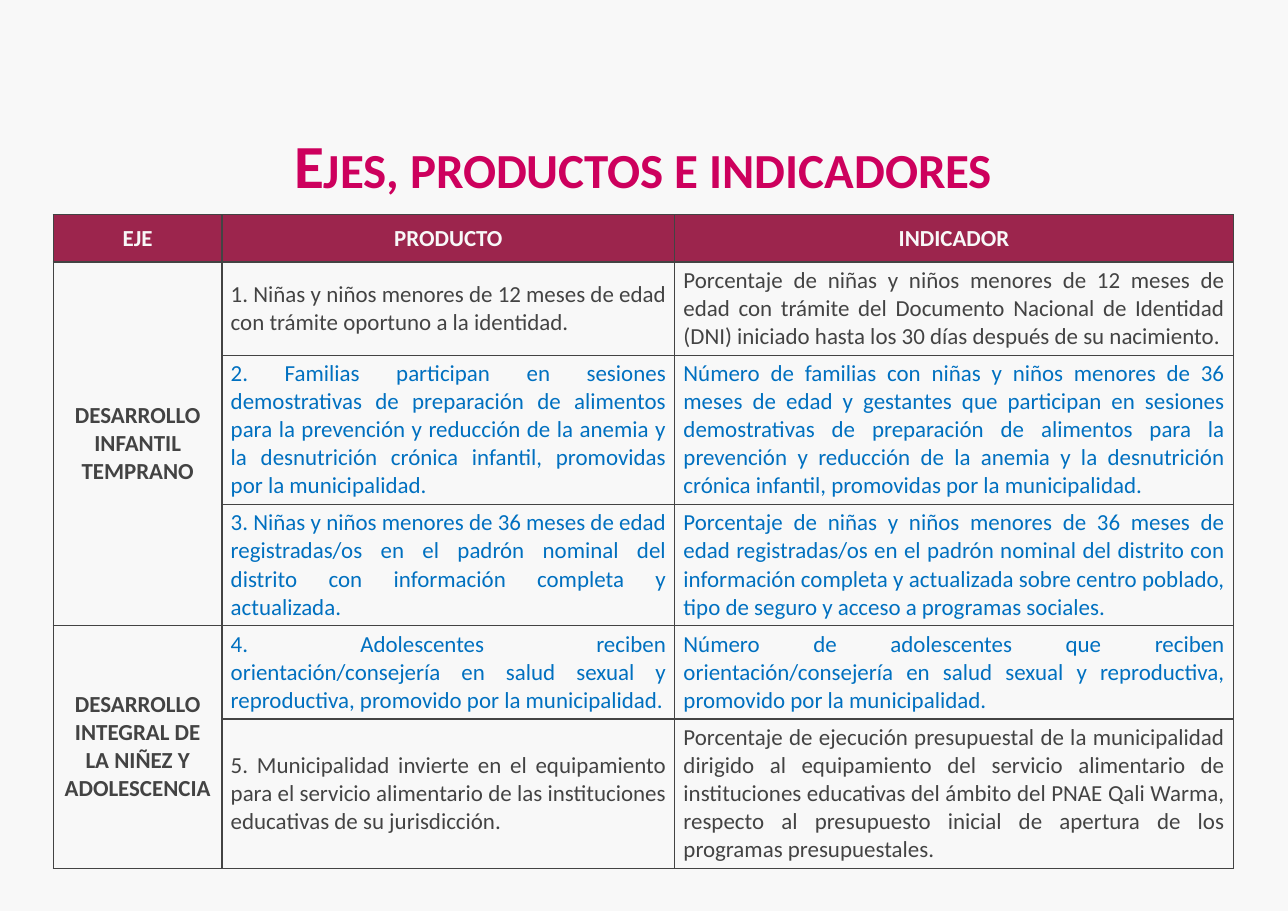
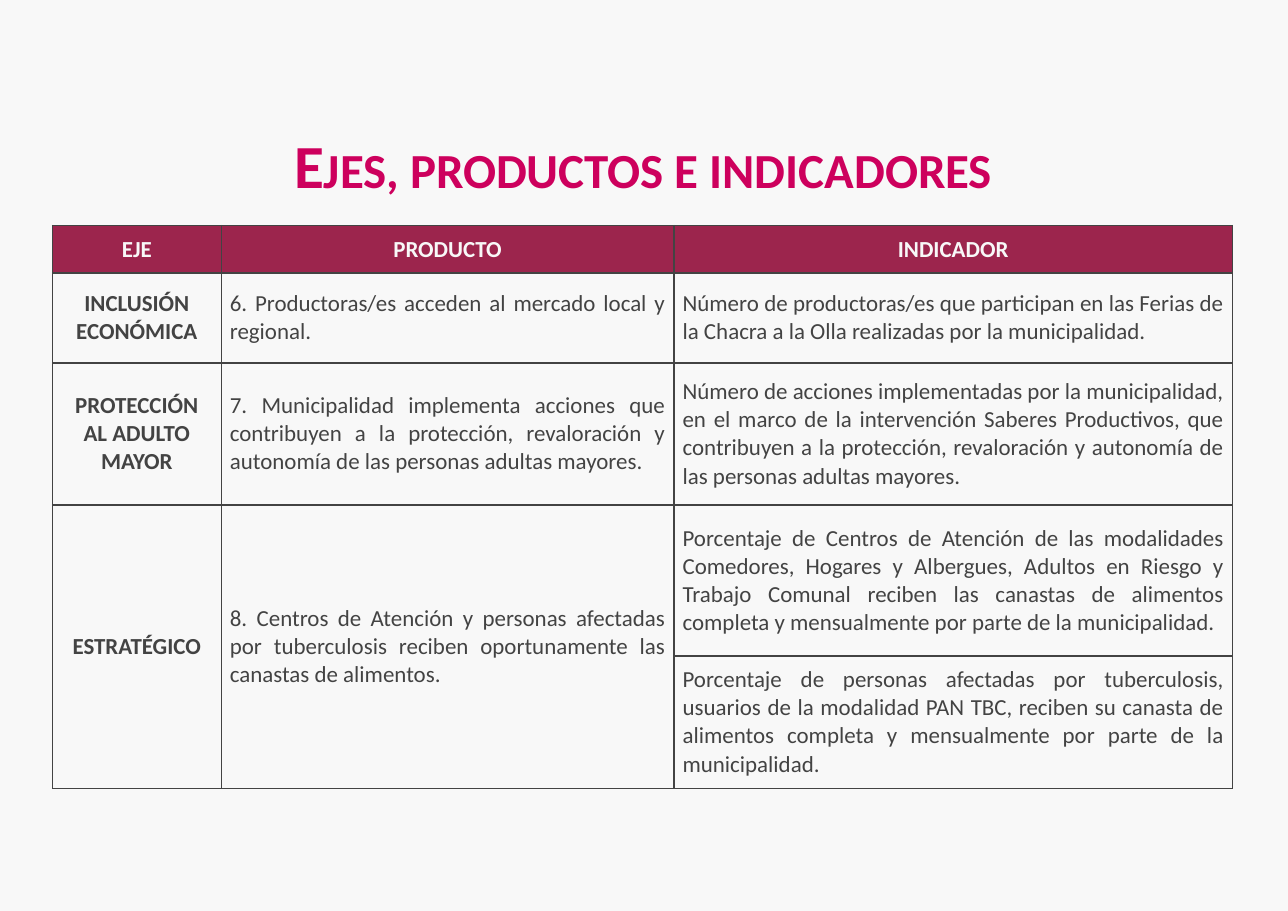
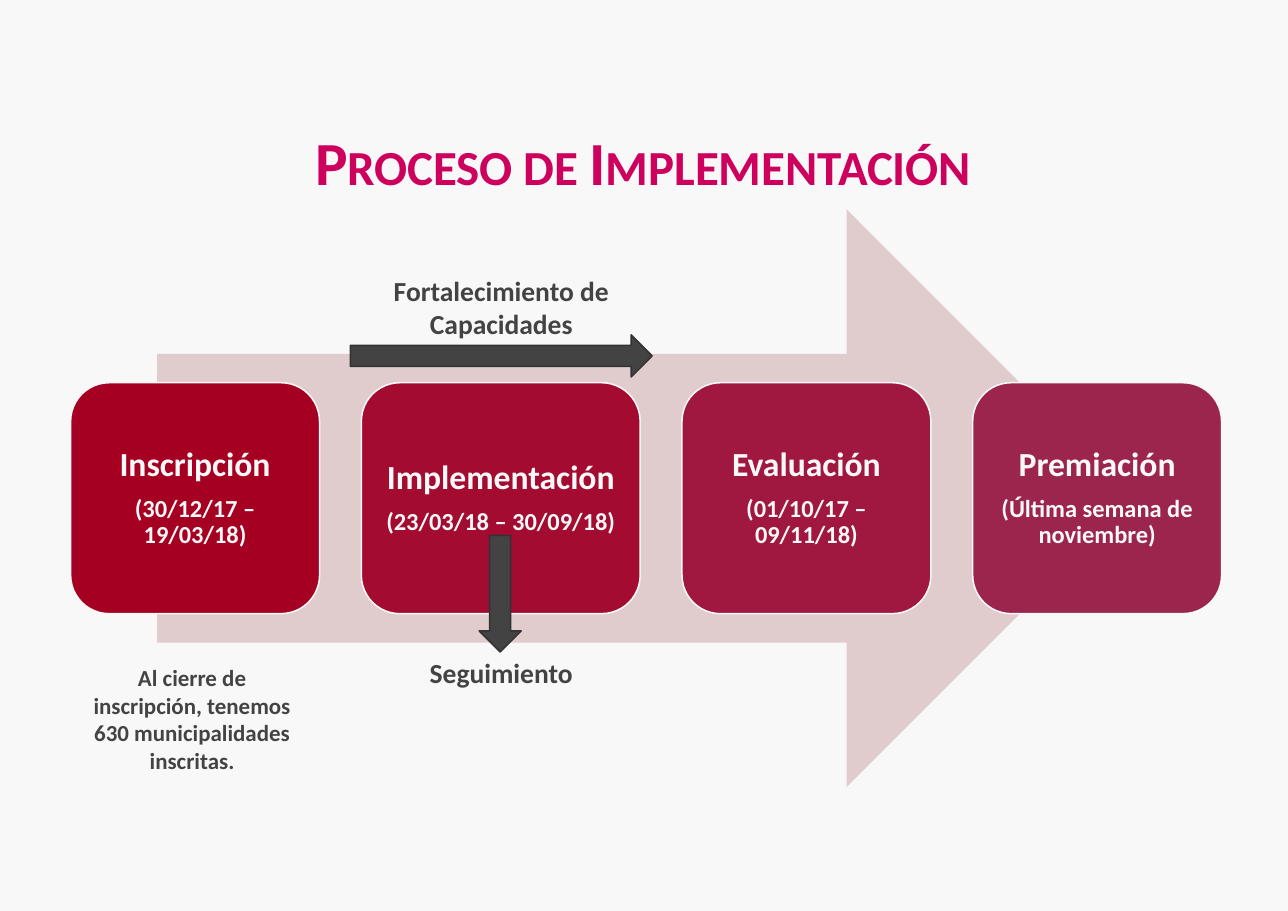
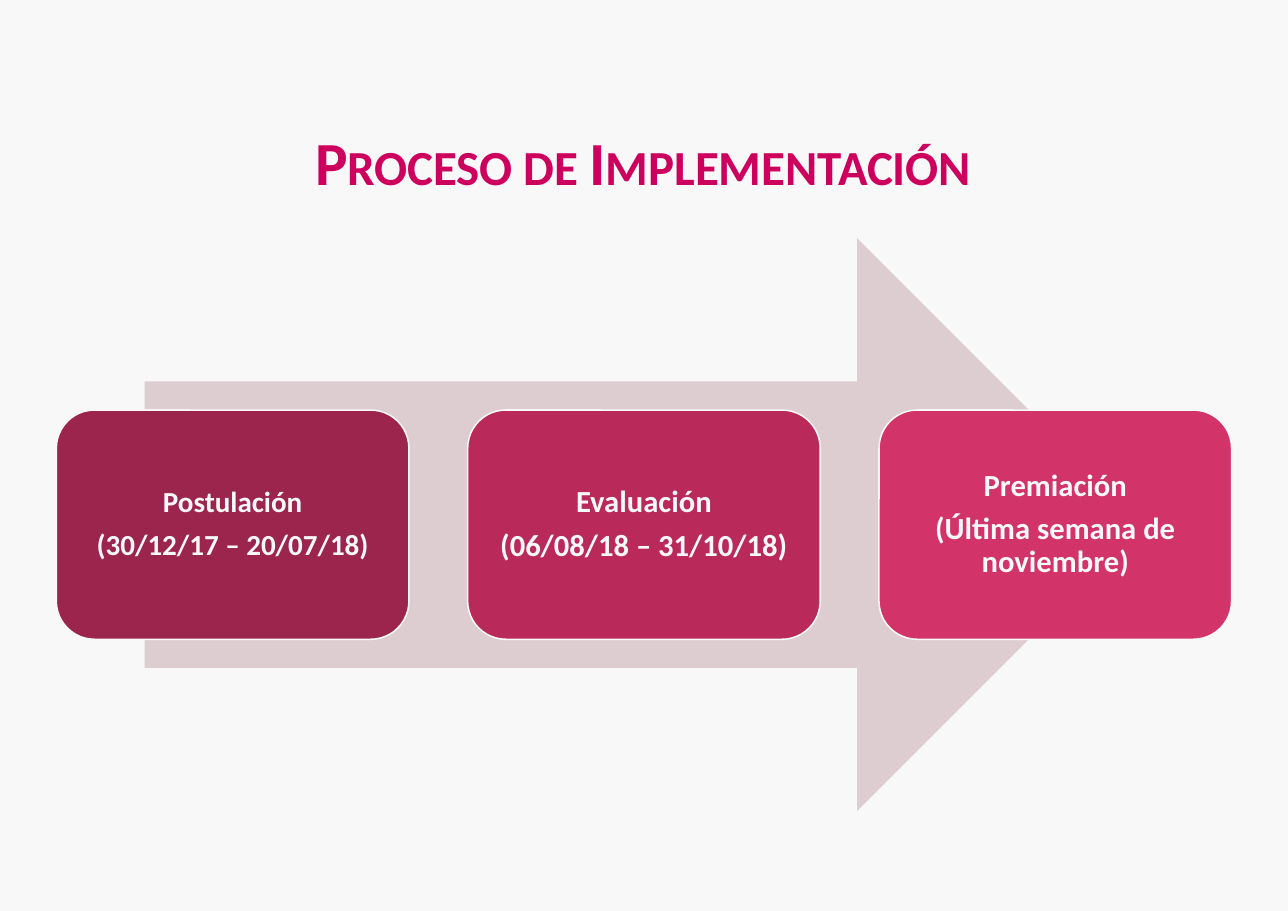
import dataclasses

import lxml.etree
import pptx
import pptx.dml.color
import pptx.enum.shapes
import pptx.enum.text
import pptx.oxml.ns
import pptx.util

Cm = pptx.util.Cm
Pt = pptx.util.Pt
Align = pptx.enum.text.PP_ALIGN
Anchor = pptx.enum.text.MSO_ANCHOR
Shape = pptx.enum.shapes.MSO_SHAPE
qn = pptx.oxml.ns.qn


@dataclasses.dataclass(frozen=True)
class Theme:
    font: str = "Calibri"
    paper: str = "F8F8F8"
    ink: str = "434343"
    edge: str = "323232"
    wine: str = "9C254D"
    pink: str = "CD005D"
    blue: str = "0070C0"
    title: int = 40
    card: int = 22
    label: int = 18
    date: int = 16
    body: int = 15


@dataclasses.dataclass(frozen=True)
class Box:
    """Left, top, width and height in centimetres."""
    x: float
    y: float
    w: float
    h: float

    def place(self):
        return Cm(self.x), Cm(self.y), Cm(self.w), Cm(self.h)


@dataclasses.dataclass(frozen=True)
class Card:
    name: str
    date: str
    fill: str
    width: float
    size: int
    small: int


T = Theme()
PAGE = Box(0, 0, 29.7, 21)
HEAD = ("EJE", "PRODUCTO", "INDICADOR")
COLS = (3.89, 10.44, 12.88)

# Row height, colour of the texts, then the three cells; None joins the cell above.
CHILD = (
    (2.15, T.ink, "DESARROLLO INFANTIL TEMPRANO",
     "1. Niñas y niños menores de 12 meses de edad con trámite oportuno a la identidad.",
     "Porcentaje de niñas y niños menores de 12 meses de edad con trámite del Documento "
     "Nacional de Identidad (DNI) iniciado hasta los 30 días después de su nacimiento."),
    (3.43, T.blue, None,
     "2. Familias participan en sesiones demostrativas de preparación de alimentos para la "
     "prevención y reducción de la anemia y la desnutrición crónica infantil, promovidas "
     "por la municipalidad.",
     "Número de familias con niñas y niños menores de 36 meses de edad y gestantes que "
     "participan en sesiones demostrativas de preparación de alimentos para la prevención "
     "y reducción de la anemia y la desnutrición crónica infantil, promovidas por la "
     "municipalidad."),
    (2.79, T.blue, None,
     "3. Niñas y niños menores de 36 meses de edad registradas/os en el padrón nominal del "
     "distrito con información completa y actualizada.",
     "Porcentaje de niñas y niños menores de 36 meses de edad registradas/os en el padrón "
     "nominal del distrito con información completa y actualizada sobre centro poblado, "
     "tipo de seguro y acceso a programas sociales."),
    (2.15, T.blue, "DESARROLLO INTEGRAL DE LA NIÑEZ Y ADOLESCENCIA",
     "4. Adolescentes reciben orientación/consejería en salud sexual y reproductiva, "
     "promovido por la municipalidad.",
     "Número de adolescentes que reciben orientación/consejería en salud sexual y "
     "reproductiva, promovido por la municipalidad."),
    (3.43, T.ink, None,
     "5. Municipalidad invierte en el equipamiento para el servicio alimentario de las "
     "instituciones educativas de su jurisdicción.",
     "Porcentaje de ejecución presupuestal de la municipalidad dirigido al equipamiento del "
     "servicio alimentario de instituciones educativas del ámbito del PNAE Qali Warma, "
     "respecto al presupuesto inicial de apertura de los programas presupuestales."),
)
ADULT = (
    (2.08, T.ink, "INCLUSIÓN ECONÓMICA",
     "6. Productoras/es acceden al mercado local y regional.",
     "Número de productoras/es que participan en las Ferias de la Chacra a la Olla "
     "realizadas por la municipalidad."),
    (3.27, T.ink, "PROTECCIÓN AL ADULTO MAYOR",
     "7. Municipalidad implementa acciones que contribuyen a la protección, revaloración y "
     "autonomía de las personas adultas mayores.",
     "Número de acciones implementadas por la municipalidad, en el marco de la intervención "
     "Saberes Productivos, que contribuyen a la protección, revaloración y autonomía de las "
     "personas adultas mayores."),
    (3.48, T.ink, "ESTRATÉGICO",
     "8. Centros de Atención y personas afectadas por tuberculosis reciben oportunamente "
     "las canastas de alimentos.",
     "Porcentaje de Centros de Atención de las modalidades Comedores, Hogares y Albergues, "
     "Adultos en Riesgo y Trabajo Comunal reciben las canastas de alimentos completa y "
     "mensualmente por parte de la municipalidad."),
    (3.05, T.ink, None, None,
     "Porcentaje de personas afectadas por tuberculosis, usuarios de la modalidad PAN TBC, "
     "reciben su canasta de alimentos completa y mensualmente por parte de la municipalidad."),
)
AWARD = "(Última semana de noviembre)"
STEPS = (
    Card("Inscripción", "(30/12/17 – 19/03/18)", "A50021", 5.74, T.card, T.date),
    Card("Implementación", "(23/03/18 – 30/09/18)", "A30B30", 6.43, T.card, T.date),
    Card("Evaluación", "(01/10/17 – 09/11/18)", "A0173F", 5.74, T.card, T.date),
    Card("Premiación", AWARD, T.wine, 5.74, T.card, T.date),
)
STAGES = (
    Card("Postulación", "(30/12/17 – 20/07/18)", T.wine, 8.13, 19, 19),
    Card("Evaluación", "(06/08/18 – 31/10/18)", "B92A5A", 8.13, 20, 20),
    Card("Premiación", AWARD, "D23369", 8.13, 20, 20),
)


def rgb(code):
    return pptx.dml.color.RGBColor.from_string(code)


def paint(item, code):
    item.fill.solid()
    item.fill.fore_color.rgb = rgb(code)


def write(para, text, size, color, bold=True, align=Align.CENTER):
    para.alignment = align
    run = para.add_run()
    run.text = text
    font = run.font
    font.name, font.size, font.bold = T.font, Pt(size), bold
    font.color.rgb = rgb(color)
    return run


def new_slide(deck):
    slide = deck.slides.add_slide(deck.slide_layouts[6])
    paint(slide.background, T.paper)
    return slide


def add_text(slide, box, text, size, color, anchor=Anchor.TOP):
    frame = slide.shapes.add_textbox(*box.place()).text_frame
    frame.word_wrap = True
    frame.vertical_anchor = anchor
    para = frame.paragraphs[0]
    return para, write(para, text, size, color)


def add_title(slide, box, text):
    para, run = add_text(slide, box, text, T.title, T.pink, Anchor.MIDDLE)
    para.line_spacing = 0.9
    run.font._element.set("cap", "small")


def add_form(slide, kind, box, fill, line=None):
    form = slide.shapes.add_shape(kind, *box.place())
    form.shadow.inherit = False
    paint(form, fill)
    if line:
        form.line.color.rgb = rgb(line)
        form.line.width = Pt(1)
    else:
        form.line.fill.background()
    return form


def add_edges(cell):
    props = cell._tc.get_or_add_tcPr()
    for side in ("a:lnL", "a:lnR", "a:lnT", "a:lnB"):
        line = lxml.etree.SubElement(props, qn(side), w=str(Pt(1)))
        fill = lxml.etree.SubElement(line, qn("a:solidFill"))
        lxml.etree.SubElement(fill, qn("a:srgbClr"), val=T.ink)


def fill_cell(cell, text, color, bold, align, fill):
    cell.margin_left = cell.margin_right = Cm(0.2)
    cell.margin_top = cell.margin_bottom = Cm(0.1)
    cell.vertical_anchor = Anchor.MIDDLE
    add_edges(cell)
    paint(cell, fill)
    if text:
        write(cell.text_frame.paragraphs[0], text, T.body, color, bold, align)


def join_cells(grid, rows):
    """Merge each None with the nearest text above it."""
    for col in range(len(COLS)):
        starts = [i for i, row in enumerate(rows, 1) if row[2 + col]]
        for start, end in zip(starts, starts[1:] + [len(rows) + 1]):
            if end - start > 1:
                grid.cell(start, col).merge(grid.cell(end - 1, col))


def add_grid(slide, left, top, rows):
    tall = [1.09] + [row[0] for row in rows]
    box = Box(left, top, sum(COLS), sum(tall))
    grid = slide.shapes.add_table(len(tall), len(COLS), *box.place()).table
    grid.horz_banding = False
    for col, wide in zip(grid.columns, COLS):
        col.width = Cm(wide)
    for row, high in zip(grid.rows, tall):
        row.height = Cm(high)
    for col, text in enumerate(HEAD):
        fill_cell(grid.cell(0, col), text, T.paper, True, Align.CENTER, T.wine)
    for i, (_, color, *texts) in enumerate(rows, 1):
        for col, text in enumerate(texts):
            axis = col == 0
            fill_cell(grid.cell(i, col), text, T.ink if axis else color, axis,
                      Align.CENTER if axis else Align.JUSTIFY, T.paper)
    join_cells(grid, rows)


def add_card(slide, box, card):
    form = add_form(slide, Shape.ROUNDED_RECTANGLE, box, card.fill, T.paper)
    frame = form.text_frame
    frame.word_wrap = True
    frame.vertical_anchor = Anchor.MIDDLE
    frame.margin_left = frame.margin_right = Cm(0.22)
    frame.margin_top = frame.margin_bottom = Cm(0.22)
    name, date = frame.paragraphs[0], frame.add_paragraph()
    name.line_spacing = date.line_spacing = 0.9
    date.space_before = Pt(round(0.35 * card.size))
    write(name, card.name, card.size, T.paper)
    write(date, card.date, card.small, T.paper)


def add_flow(slide, box, cards, tint):
    """Cards in a row over a wide arrow, both centred in the box."""
    arrow = Box(box.x + 0.075 * box.w, box.y, 0.85 * box.w, box.h)
    add_form(slide, Shape.RIGHT_ARROW, arrow, tint)
    gap = (box.w - sum(card.width for card in cards)) / (len(cards) - 1)
    left = box.x
    for card in cards:
        add_card(slide, Box(left, box.y + 0.3 * box.h, card.width, 0.4 * box.h), card)
        left += card.width + gap


def add_notes(slide, box):
    """Labels and small arrows around the second card, and the count below the first."""
    x, y = box.x, box.y
    for top, high, text in ((1.37, 1.8, "Fortalecimiento de Capacidades"),
                            (10.16, 1.02, "Seguimiento")):
        add_text(slide, Box(x + 6.45, y + top, 6.96, high), text, T.label, T.ink)
    for kind, spot in ((Shape.DOWN_ARROW, Box(x + 9.42, y + 7.51, 0.97, 2.69)),
                       (Shape.RIGHT_ARROW, Box(x + 6.45, y + 2.89, 6.96, 0.97))):
        add_form(slide, kind, spot, T.ink, T.edge)
    add_text(slide, Box(x + 0.12, y + 10.18, 5.36, 3.12),
             "Al cierre de inscripción, tenemos 630 municipalidades inscritas.",
             T.body, T.ink, Anchor.MIDDLE)


def table_slide(deck, left, top, rows):
    slide = new_slide(deck)
    add_grid(slide, left, top, rows)
    add_title(slide, Box(2.03, 2.57, 25.6, 2.62), "Ejes, productos e indicadores")


def flow_slide(deck, box, cards, tint):
    slide = new_slide(deck)
    add_flow(slide, box, cards, tint)
    add_title(slide, Box(2.03, 2.46, 25.6, 2.72), "Proceso de Implementación")
    return slide


def main():
    deck = pptx.Presentation()
    deck.slide_width, deck.slide_height = Cm(PAGE.w), Cm(PAGE.h)
    table_slide(deck, 1.23, 4.95, CHILD)
    table_slide(deck, 1.21, 5.2, ADULT)
    box = Box(1.63, 4.83, 26.54, 13.31)
    add_notes(flow_slide(deck, box, STEPS, "E1CCCD"), box)
    flow_slide(deck, Box(1.3, 5.49, 27.1, 13.21), STAGES, "DECDD0")
    deck.save("out.pptx")


if __name__ == "__main__":
    main()
